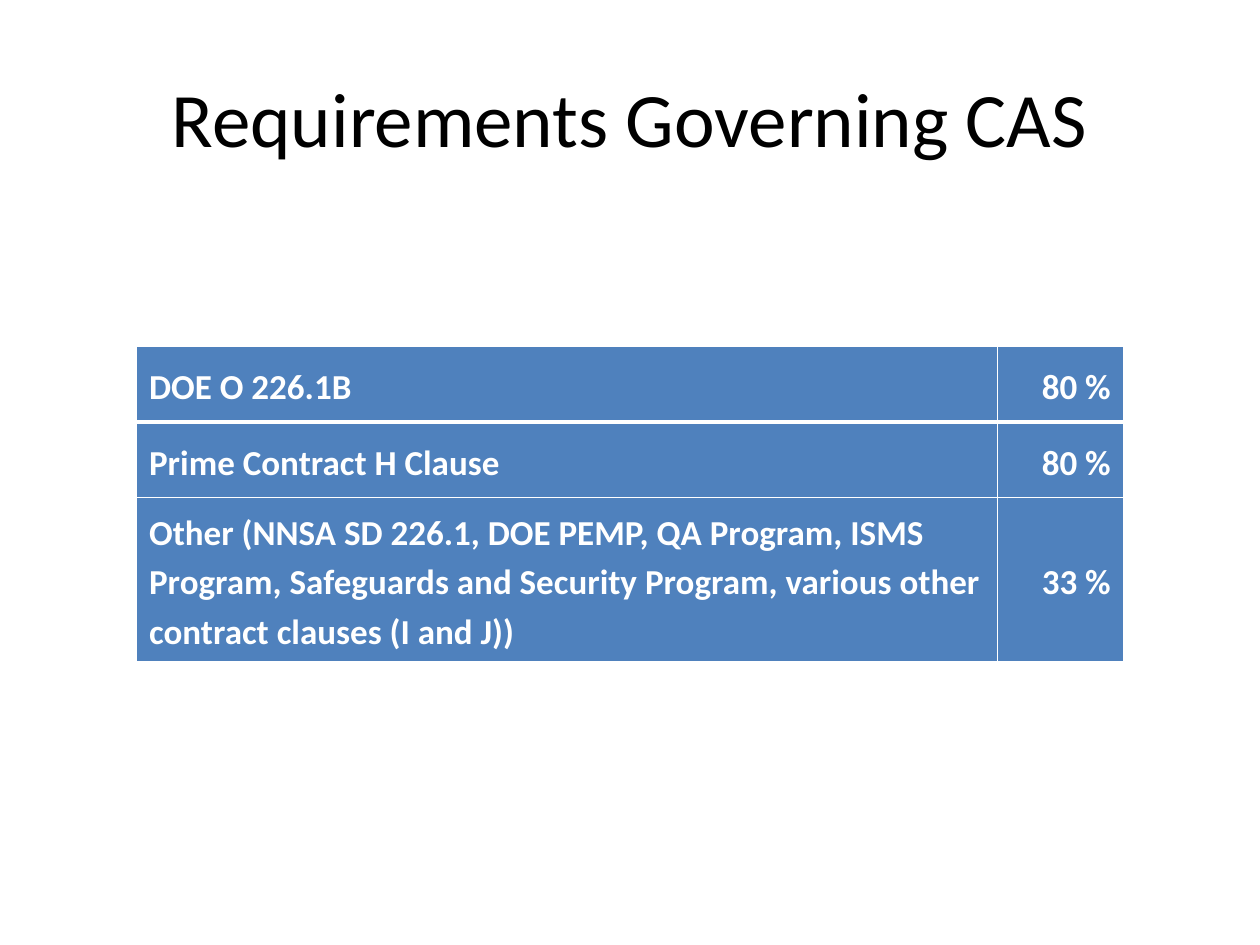
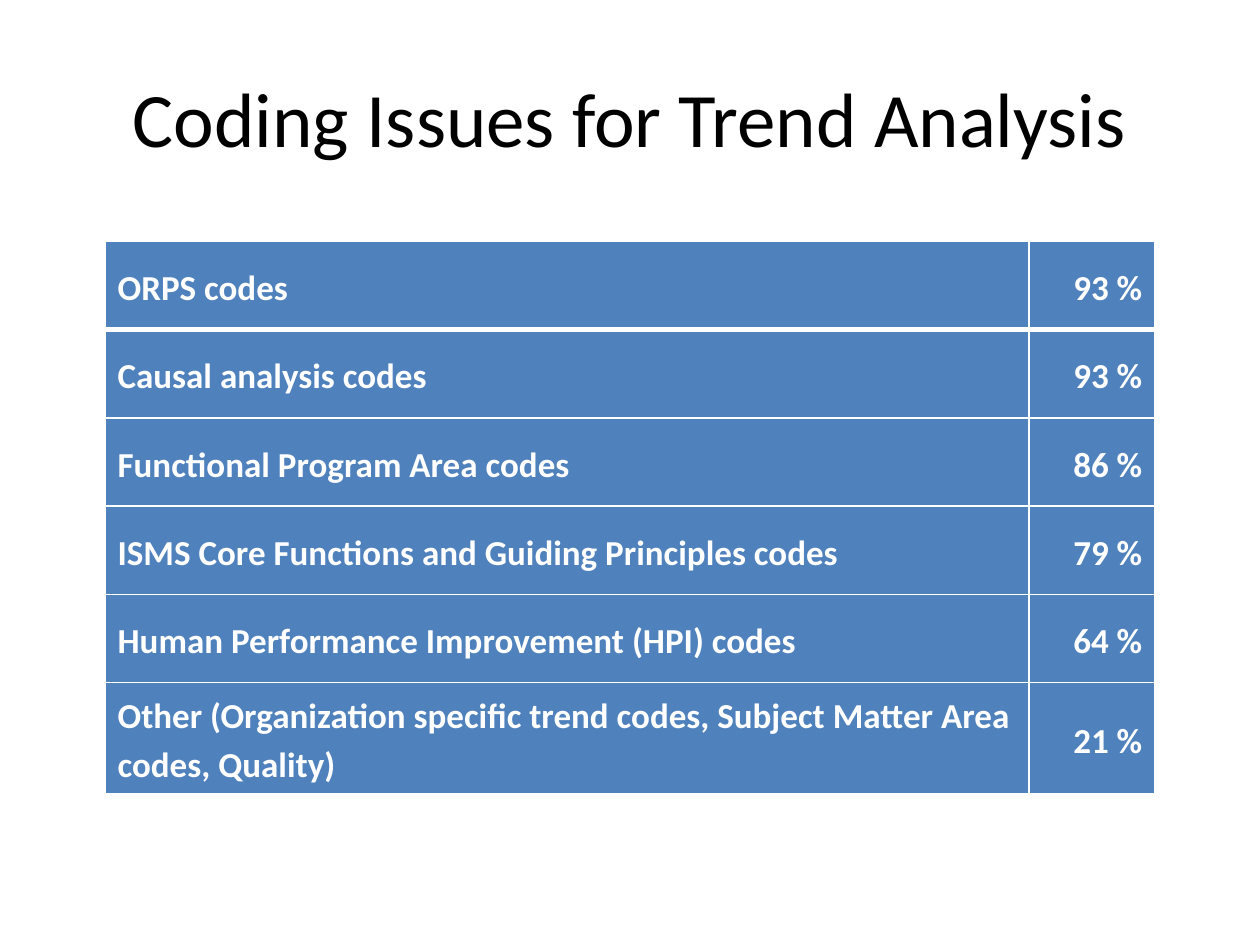
from lxml import etree
from pptx import Presentation
from pptx import util as u
from pptx.dml.color import RGBColor
from pptx.enum import text
from pptx.oxml import ns

BLACK = RGBColor(0x00, 0x00, 0x00)
WHITE = RGBColor(0xFF, 0xFF, 0xFF)
BLUE = RGBColor(0x4F, 0x81, 0xBD)
FONT = "Calibri"

COLS, ROWS = 120, 90
VALUE_COLS = 12

REQUIREMENTS = [
    ("DOE O 226.1B", "80 %"),
    ("Prime Contract H Clause", "80 %"),
    ("Other (NNSA SD 226.1, DOE PEMP, QA Program, ISMS Program, "
     "Safeguards and Security Program, various other contract clauses (I and J))", "33 %"),
]
TREND_CODES = [
    ("ORPS codes", "93 %"),
    ("Causal analysis codes", "93 %"),
    ("Functional Program Area codes", "86 %"),
    ("ISMS Core Functions and Guiding Principles codes", "79 %"),
    ("Human Performance Improvement (HPI) codes", "64 %"),
    ("Other (Organization specific trend codes, Subject Matter Area codes, Quality)", "21 %"),
]


class Deck:
    def __init__(self):
        self.prs = Presentation()
        self.prs.slide_width = u.Inches(10)
        self.prs.slide_height = u.Inches(7.5)
        self.s = None

    def x(self, cols):
        return round(self.prs.slide_width * cols / COLS)

    def y(self, rows):
        return round(self.prs.slide_height * rows / ROWS)

    def run(self, p, words, size, color, bold=False):
        r = p.add_run()
        r.text = words
        r.font.name = FONT
        r.font.size = u.Pt(size)
        r.font.bold = bold
        r.font.color.rgb = color

    def slide(self, title):
        self.s = self.prs.slides.add_slide(self.prs.slide_layouts[5])
        sp = self.s.shapes.title
        sp.left, sp.top = self.x(6), self.y(3.6)
        sp.width, sp.height = self.x(108), self.y(15)
        tf = sp.text_frame
        tf.vertical_anchor = text.MSO_ANCHOR.MIDDLE
        p = tf.paragraphs[0]
        p.alignment = text.PP_ALIGN.CENTER
        self.run(p, title, 44, BLACK)

    def borders(self, cell, top, bottom):
        tc_pr = cell._tc.get_or_add_tcPr()
        for side, width in (("L", 1), ("R", 1), ("T", top), ("B", bottom)):
            ln = etree.SubElement(tc_pr, ns.qn(f"a:ln{side}"), w=str(u.Pt(width)))
            fill = etree.SubElement(ln, ns.qn("a:solidFill"))
            etree.SubElement(fill, ns.qn("a:srgbClr"), val=str(WHITE))

    def cell(self, cell, words, align, top, bottom):
        self.borders(cell, top, bottom)
        cell.fill.solid()
        cell.fill.fore_color.rgb = BLUE
        cell.vertical_anchor = text.MSO_ANCHOR.MIDDLE
        p = cell.text_frame.paragraphs[0]
        p.alignment = align
        p.line_spacing = 1.15
        self.run(p, words, 20, WHITE, bold=True)

    def table(self, entries, top, width, heights):
        frame = self.s.shapes.add_table(
            len(entries), 2, self.x((COLS - width) / 2), self.y(top),
            self.x(width), self.y(sum(heights)))
        table = frame.table
        table.first_row = table.horz_banding = False
        table.columns[0].width = self.x(width - VALUE_COLS)
        table.columns[1].width = self.x(VALUE_COLS)
        aligns = (text.PP_ALIGN.LEFT, text.PP_ALIGN.RIGHT)
        for i, (entry, height) in enumerate(zip(entries, heights)):
            table.rows[i].height = self.y(height)
            rule_above = 3 if i == 1 else 1
            rule_below = 3 if i == 0 else 1
            for j, (words, align) in enumerate(zip(entry, aligns)):
                self.cell(table.cell(i, j), words, align, rule_above, rule_below)


def main():
    deck = Deck()
    deck.slide("Requirements Governing CAS")
    deck.table(REQUIREMENTS, top=33, width=94, heights=[7.2, 7.2, 15.6])
    deck.slide("Coding Issues for Trend Analysis")
    deck.table(TREND_CODES, top=23, width=100, heights=[8.4] * len(TREND_CODES))
    deck.prs.save("out.pptx")


if __name__ == "__main__":
    main()
